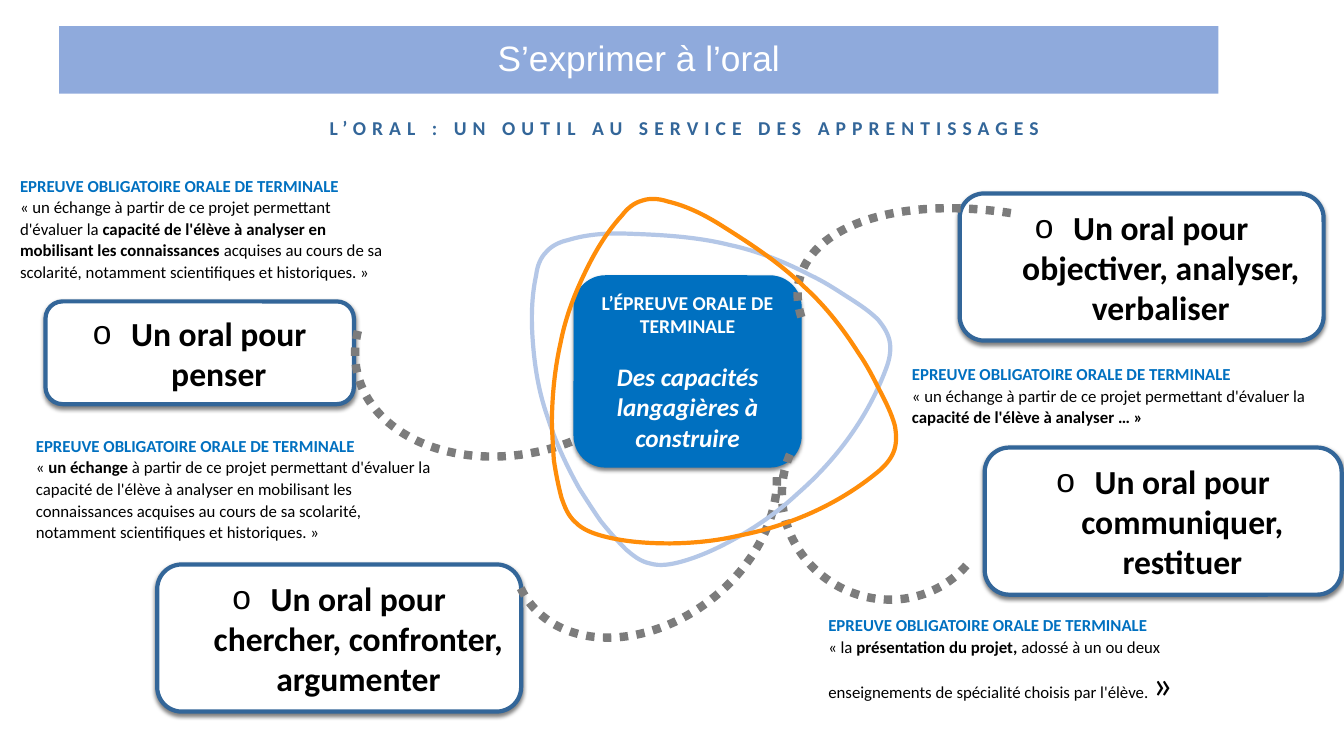
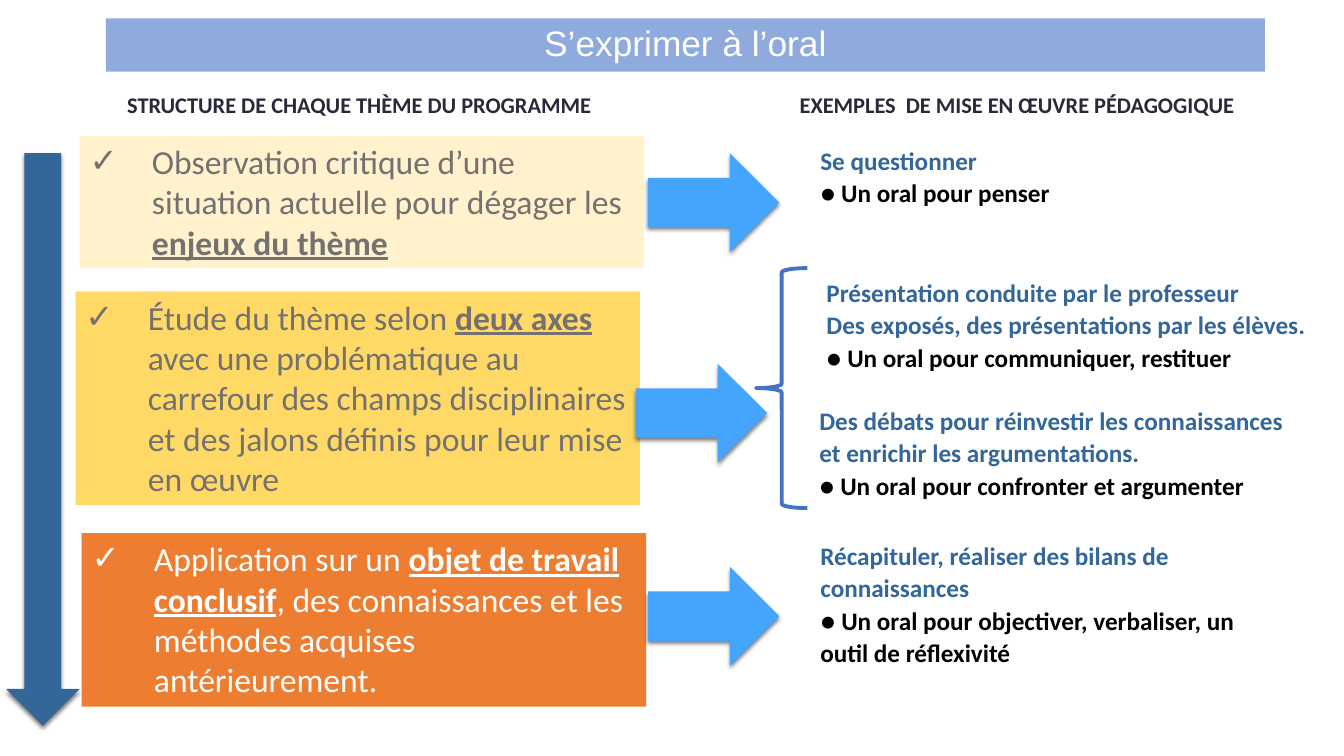
from math import cos, radians, sin

from lxml.etree import SubElement
from pptx import Presentation
from pptx.dml.color import RGBColor
from pptx.enum.dml import MSO_LINE
from pptx.enum.shapes import MSO_SHAPE as Preset
from pptx.enum.text import MSO_ANCHOR as Anchor, PP_ALIGN as Align
from pptx.oxml.ns import qn
from pptx.util import Pt

WHITE = RGBColor(0xFF, 0xFF, 0xFF)
BLACK = RGBColor(0x00, 0x00, 0x00)
BAND = RGBColor(0x8F, 0xAA, 0xDC)
NAVY = RGBColor(0x33, 0x66, 0x99)
BLUE = RGBColor(0x00, 0x70, 0xC0)
SKY = RGBColor(0x45, 0xA4, 0xFC)
BRACE = RGBColor(0x44, 0x72, 0xC4)
PALE_BLUE = RGBColor(0xB4, 0xC7, 0xE7)
DARK = RGBColor(0x28, 0x2A, 0x3A)
GREY = RGBColor(0x7C, 0x7C, 0x7C)
TEXT_GREY = RGBColor(0x76, 0x71, 0x71)
CREAM = RGBColor(0xFF, 0xF2, 0xCC)
YELLOW = RGBColor(0xFF, 0xD9, 0x66)
RUST = RGBColor(0xED, 0x7D, 0x31)
ORANGE = RGBColor(0xFF, 0x8D, 0x09)


def add_block(slide, box, preset=None, fill=None, line=None, weight=3, shadow=False):
    """Add a preset shape, or a text box when there is no preset; box is in points."""
    box = [Pt(length) for length in box]
    if preset is None:
        block = slide.shapes.add_textbox(*box)
    else:
        block = slide.shapes.add_shape(preset, *box)
        block.shadow.inherit = False
        if fill is None:
            block.fill.background()
        else:
            block.fill.solid()
            block.fill.fore_color.rgb = fill
        if line is None:
            block.line.fill.background()
        else:
            block.line.color.rgb = line
            block.line.width = Pt(weight)
    if shadow:
        effects = block.element.spPr.find(qn("a:effectLst"))
        outer = SubElement(effects, qn("a:outerShdw"), blurRad=str(Pt(3)), dist=str(Pt(2)),
                           dir="5400000", rotWithShape="0")
        black = SubElement(outer, qn("a:srgbClr"), val="000000")
        SubElement(black, qn("a:alpha"), val="50000")
    block.text_frame.word_wrap = True
    return block


def write(block, paragraphs, size, align=Align.LEFT, spacing=1.0, middle=False,
          bullet=None, indent=0, font="Calibri"):
    """Each paragraph is (colour, runs); a run is (text, b/i/u marks[, own size])."""
    frame = block.text_frame
    frame.vertical_anchor = Anchor.MIDDLE if middle else Anchor.TOP
    if middle:
        frame.margin_left = frame.margin_right = Pt(4.5)
        frame.margin_top = frame.margin_bottom = Pt(4.5)
    for index, (colour, runs) in enumerate(paragraphs):
        paragraph = frame.add_paragraph() if index else frame.paragraphs[0]
        paragraph.alignment = align
        paragraph.line_spacing = spacing
        if bullet:
            properties = paragraph._p.get_or_add_pPr()
            properties.set("marL", str(Pt(indent)))
            properties.set("indent", str(Pt(-indent)))
            SubElement(properties, qn("a:buFont"), typeface="Arial")
            SubElement(properties, qn("a:buChar"), char=bullet)
        for text, marks, *own_size in runs:
            run = paragraph.add_run()
            run.text = text
            run.font.name = font
            run.font.size = Pt(own_size[0] if own_size else size)
            run.font.color.rgb = colour
            run.font.bold = "b" in marks
            run.font.italic = "i" in marks
            run.font.underline = "u" in marks


deck = Presentation()
deck.slide_width, deck.slide_height = Pt(960), Pt(540)
slides = []
for band_box in [(42.3, 18.7, 828, 48.2), (75.6, 13.2, 828, 38)]:
    slide = deck.slides.add_slide(deck.slide_layouts[6])
    band = add_block(slide, band_box, Preset.RECTANGLE, BAND)
    write(band, [(WHITE, [("S’exprimer à l’oral", "")])], 25.2, Align.CENTER, 0.9, True,
          font="Arial")
    slides.append(slide)
skills, programme = slides

# Slide 1: the oral exam and its four skills
subtitle = add_block(skills, (54.7, 72.6, 868.3, 37.4))
write(subtitle, [(NAVY, [("L’ORAL : UN OUTIL AU SERVICE DES APPRENTISSAGES", "b")])],
      14, Align.CENTER, middle=True)
subtitle.text_frame.paragraphs[0].runs[0].font._element.set("spc", "430")

exam = add_block(skills, (409.7, 196.6, 163, 137.4), Preset.ROUNDED_RECTANGLE, BLUE, shadow=True)
write(exam, [(WHITE, [("L’ÉPREUVE ORALE DE TERMINALE", "b")]),
             (WHITE, [("Des capacités langagières à construire", "bi", 18)])],
      14, Align.CENTER, middle=True)
exam.text_frame.paragraphs[1].space_before = Pt(17)

for box, skill in [
    ((32.5, 215.3, 220.3, 73.4), "penser"),
    ((112.3, 403.2, 260, 105.1), "chercher, confronter, argumenter"),
    ((685.5, 138.2, 260, 105.1), "objectiver, analyser, verbaliser"),
    ((703.4, 319.7, 255, 105.1), "communiquer, restituer"),
]:
    card = add_block(skills, box, Preset.ROUNDED_RECTANGLE, WHITE, NAVY, shadow=True)
    write(card, [(BLACK, [("Un oral pour " + skill, "b")])], 24, Align.CENTER,
          middle=True, bullet="o", indent=27.4)

for box, rotation, flips, ends in [
    ((283.7, 126, 167, 229.7), 77.5, ["flipV"], (153.1, 10.93)),
    ((383, 263.5, 154.8, 207.4), 52, ["flipV"], (157.76, 42.2)),
    ((648.7, 73.4, 171.4, 337.7), 284.9, [], (156.37, 203.89)),
    ((560.9, 280.1, 144, 150.5), 302.2, ["flipH", "flipV"], (166.8, 50.37)),
]:
    link = add_block(skills, box, Preset.ARC, line=GREY, weight=6)
    link.line.dash_style = MSO_LINE.ROUND_DOT
    link.rotation = rotation
    for flip in flips:
        link.element.spPr.xfrm.set(flip, "1")
    for position, end in enumerate(ends):
        link.adjustments[position] = end

# Rounded triangle: start point, then two control points and an end point per curve
triangle = [
    (383, 196.6), (383.8, 190.1), (385.9, 184.3), (390.2, 180),
    (393.8, 175.7), (399.6, 172.8), (406.1, 171.4), (420.5, 167), (435.6, 166.3), (450.7, 167),
    (473.8, 167.8), (498.2, 169.2), (521.3, 175), (541.4, 179.3), (560.9, 187.2), (578.9, 196.6),
    (588.2, 200.9), (596.9, 206.6), (604.8, 211.7), (612.7, 216.7), (620.6, 221.8), (627.1, 228.2),
    (631.4, 233.3), (635, 239), (635.8, 245.5), (636.5, 252), (635, 257.8), (632.9, 263.5),
    (619.9, 298.1), (597.6, 328.3), (569.5, 352.8), (558, 363.6), (545, 373), (530.6, 381.6),
    (517, 389.5), (502.6, 396.7), (487.4, 401), (479.5, 403.2), (471.6, 404.6), (464.4, 402.5),
    (457.2, 401), (452.2, 396.7), (447.1, 392.4), (440.6, 385.9), (434.9, 379.4), (429.1, 372.2),
    (424.1, 365), (419, 357.1), (414, 349.2), (404.6, 332.6), (396.7, 315.4), (391, 297.4),
    (385.2, 280.8), (382.3, 264.2), (380.9, 247), (379.4, 230.4), (379.4, 213.1), (383, 196.6),
]
centre_x, centre_y = 492.5, 288.7
for colour, turn in [(PALE_BLUE, 0), (ORANGE, radians(30.2))]:
    outline = [(Pt(centre_x + (x - centre_x) * cos(turn) - (y - centre_y) * sin(turn)),
                Pt(centre_y + (x - centre_x) * sin(turn) + (y - centre_y) * cos(turn)))
               for x, y in triangle]
    builder = skills.shapes.build_freeform(*outline[0])
    builder.add_line_segments(outline[1:], close=True)
    ring = builder.convert_to_shape()
    # Turn each group of three straight segments into one Bézier curve
    segments = list(ring.element.iter(qn("a:lnTo")))
    for first in range(0, len(segments), 3):
        curve = segments[first].makeelement(qn("a:cubicBezTo"))
        segments[first].addprevious(curve)
        for segment in segments[first:first + 3]:
            curve.append(segment[0])
            segment.getparent().remove(segment)
    ring.shadow.inherit = False
    ring.fill.background()
    ring.line.color.rgb = colour
    ring.line.width = Pt(3)

for box, quote in [
    ((7.2, 120.7, 281, 84), [
        ("« un échange à partir de ce projet permettant d'évaluer la ", ""),
        ("capacité de l'élève à analyser en mobilisant les connaissances ", "b"),
        ("acquises au cours de sa scolarité, notamment scientifiques et historiques. »", "")]),
    ((18.5, 306.6, 306, 84), [
        ("« ", ""), ("un échange ", "b"),
        ("à partir de ce projet permettant d'évaluer la capacité de l'élève à analyser en "
         "mobilisant les connaissances acquises au cours de sa scolarité, notamment "
         "scientifiques et historiques. »", "")]),
    ((644.3, 255.4, 314, 53), [
        ("« un échange à partir de ce projet permettant d'évaluer la ", ""),
        ("capacité de l'élève à analyser … »", "b")]),
    ((584.6, 434.6, 266, 89), [
        ("« la ", ""), ("présentation du projet,", "b"),
        (" adossé à un ou deux enseignements de spécialité choisis par l'élève. ", ""),
        ("»", "", 28)]),
]:
    write(add_block(skills, box),
          [(BLUE, [("EPREUVE OBLIGATOIRE ORALE DE TERMINALE", "b")]), (BLACK, quote)],
          12, spacing=1.07)

# Slide 2: structure of each theme, with classroom examples
for box, heading, align in [
    ((86.4, 61.2, 454, 27.4), "STRUCTURE DE CHAQUE THÈME DU PROGRAMME", Align.LEFT),
    ((496, 61.2, 461, 27.4), "EXEMPLES  DE MISE EN ŒUVRE PÉDAGOGIQUE", Align.CENTER),
]:
    write(add_block(programme, box), [(DARK, [(heading, "b")])], 16, align, middle=True)

add_block(programme, (4.3, 109.4, 52.6, 409), Preset.DOWN_ARROW, NAVY, shadow=True)

for box, fill, colour, stage in [
    ((56.9, 97.2, 403.2, 94.3), CREAM, TEXT_GREY, [
        ("Observation critique d’une situation actuelle pour dégager les ", ""),
        ("enjeux du thème", "bu")]),
    ((54, 208.2, 403.2, 152.6), YELLOW, TEXT_GREY, [
        ("Étude du thème selon ", ""), ("deux axes ", "bu"),
        ("avec une problématique au carrefour des champs disciplinaires et des jalons "
         "définis pour leur mise en œuvre", "")]),
    ((58.3, 380.9, 403.2, 123.8), RUST, WHITE, [
        ("Application sur un ", ""), ("objet de travail conclusif", "bu"),
        (", des connaissances et les méthodes acquises antérieurement.", "")]),
]:
    write(add_block(programme, box, Preset.RECTANGLE, fill), [(colour, stage)], 24,
          bullet="✓", indent=44.6)

for left, top in [(463, 109.4), (454.3, 259.7), (463, 404.8)]:
    add_block(programme, (left, top, 93.6, 70.6), Preset.RIGHT_ARROW, SKY, shadow=True)

for box, activities, outcomes in [
    ((578.9, 98.6, 258, 53), ["Se questionner"], ["● Un oral pour penser"]),
    ((583.2, 193, 359, 76),
     ["Présentation conduite par le professeur",
      "Des exposés, des présentations par les élèves."],
     ["● Un oral pour communiquer, restituer"]),
    ((578.2, 284.4, 369, 76),
     ["Des débats pour réinvestir les connaissances", "et enrichir les argumentations."],
     ["● Un oral pour confronter et argumenter"]),
    ((578.9, 380.9, 325, 99),
     ["Récapituler, réaliser des bilans de connaissances"],
     ["● Un oral pour objectiver, verbaliser, un", "outil de réflexivité"]),
]:
    lines = [(NAVY, [(text, "b")]) for text in activities]
    lines += [(BLACK, [(text, "b")]) for text in outcomes]
    write(add_block(programme, box), lines, 18, spacing=1.07)

add_block(programme, (540, 191.5, 36.7, 171.4), Preset.LEFT_BRACE, line=BRACE, weight=2.75)

deck.save("out.pptx")
